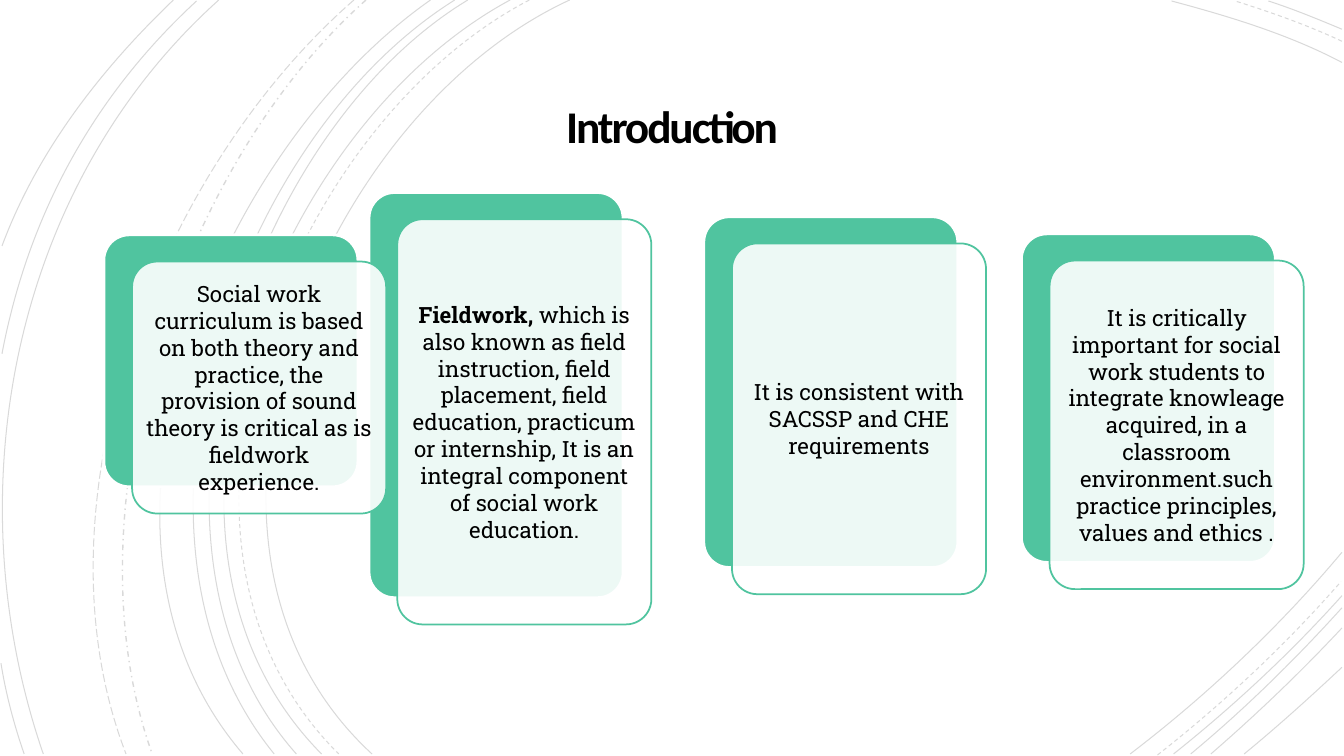
"""Builds the Introduction slide: four layered cards over a field of thin arcs."""
import pptx
import pptx.util
import pptx.dml.color
import pptx.enum.dml
import pptx.enum.shapes
import pptx.enum.text
import pptx.oxml.ns
import lxml.etree

Inches = pptx.util.Inches
Pt = pptx.util.Pt
DASH = pptx.enum.dml.MSO_LINE
GREEN, WHITE, BLACK = "50C49F", "FFFFFF", "000000"


def paint(fill, color, opacity=100):
    fill.solid()
    fill.fore_color.rgb = pptx.dml.color.RGBColor.from_string(color)
    if opacity < 100:
        parent = fill._xPr.find(".//" + pptx.oxml.ns.qn("a:srgbClr"))
        alpha = lxml.etree.SubElement(parent, pptx.oxml.ns.qn("a:alpha"))
        alpha.set("val", str(opacity * 1000))


def add_run(paragraph, text, font, size, bold=False):
    run = paragraph.add_run()
    run.text = text
    run.font.name = font
    run.font.size = Pt(size)
    run.font.bold = bold
    paint(run.font.fill, BLACK)
    return run


presentation = pptx.Presentation()
presentation.slide_width = Inches(13.33)
presentation.slide_height = Inches(7.5)
slide = presentation.slides.add_slide(presentation.slide_layouts[5])
paint(slide.background.fill, WHITE)

arcs = [
    ((5.65, 0), (3.15, 1.15), (1.43, 5.4), (3.69, 7.48), "solid"),
    ((13.31, 0.62), (12.78, 0.34), (12.18, 0.16), (11.62, 0.01), "solid"),
    ((11.21, 7.48), (11.97, 6.9), (12.69, 6.22), (13.31, 5.48), "solid"),
    ((5.25, 0), (2.85, 1.25), (1.23, 5.37), (3.36, 7.48), "dash"),
    ((13.31, 0.41), (12.97, 0.25), (12.6, 0.12), (12.25, 0.01), "dash"),
    ((11.48, 7.49), (12.13, 6.98), (12.75, 6.4), (13.3, 5.77), "dash"),
    ((5.06, 0), (2.7, 1.27), (1.1, 5.37), (3.19, 7.48), "solid"),
    ((13.31, 0.29), (13.07, 0.19), (12.83, 0.09), (12.58, 0.01), "solid"),
    ((11.64, 7.48), (12.23, 7.01), (12.8, 6.48), (13.31, 5.91), "solid"),
    ((4.64, 0), (2.44, 1.33), (1.1, 5.41), (2.94, 7.48), "solid"),
    ((11.81, 7.48), (12.34, 7.04), (12.84, 6.55), (13.31, 6.03), "solid"),
    ((4.51, 0), (2.31, 1.38), (0.97, 5.33), (2.72, 7.48), "solid"),
    ((12.01, 7.48), (12.46, 7.09), (12.9, 6.67), (13.31, 6.23), "solid"),
    ((4.27, 0), (2.17, 1.47), (0.53, 5.29), (2.41, 7.48), "solid"),
    ((12.34, 7.48), (12.67, 7.21), (12.99, 6.92), (13.31, 6.62), "solid"),
    ((3.63, 0), (1.76, 1.66), (0.65, 5.09), (1.51, 7.48), "dash dot"),
    ((3.51, 0), (1.57, 1.69), (0.29, 4.99), (1.25, 7.48), "long dash"),
    ((2.17, 0), (0.11, 1.85), (-0.46, 4.9), (0.43, 7.48), "solid"),
    ((1.95, 0.01), (0.92, 0.96), (0.28, 2.14), (0.02, 3.51), "solid"),
    ((0.01, 6.58), (0.06, 6.89), (0.14, 7.19), (0.24, 7.48), "solid"),
    ((1.72, 0), (1, 0.69), (0.37, 1.5), (0.02, 2.44), "solid"),
]
dashes = {"solid": DASH.SOLID, "dash": DASH.DASH,
          "dash dot": DASH.DASH_DOT, "long dash": DASH.LONG_DASH}
for *corners, dash in arcs:
    points = [(Inches(x), Inches(y)) for x, y in corners]
    builder = slide.shapes.build_freeform(*points[0])
    builder.add_line_segments(points[1:], close=False)
    arc = builder.convert_to_shape()
    outline = arc._element.find(".//" + pptx.oxml.ns.qn("a:path"))
    curve = lxml.etree.SubElement(outline, pptx.oxml.ns.qn("a:cubicBezTo"))
    for segment in outline.findall(pptx.oxml.ns.qn("a:lnTo")):
        curve.append(segment[0])
        outline.remove(segment)
    arc.shadow.inherit = False
    arc.fill.background()
    arc.line.width = Pt(1 if dash == "dash dot" else 0.75)
    paint(arc.line.fill, BLACK, 15)
    arc.line.dash_style = dashes[dash]

title = slide.shapes.title
title.left, title.top, title.width, title.height = map(Inches, (1.92, 0.87, 9.49, 1.15))
frame = title.text_frame
frame.auto_size = pptx.enum.text.MSO_AUTO_SIZE.NONE
frame.vertical_anchor = pptx.enum.text.MSO_ANCHOR.MIDDLE
frame.margin_left = frame.margin_right = Inches(0.25)
frame.margin_top, frame.margin_bottom = Inches(0.1), Inches(0.41)
paragraph = frame.paragraphs[0]
paragraph.alignment = pptx.enum.text.PP_ALIGN.CENTER
paragraph.line_spacing = 0.85
run = add_run(paragraph, "Introduction", "Calibri", 32.4, True)
run.font._element.set("spc", "-150")

card_width, offset_x, offset_y, inset = 2.52, 0.28, 0.265, 0.075
cards = [
    (3.66, 1.91, 4.02, "Fieldwork, ",
     "which is also known as field instruction, field placement, field education, "
     "practicum or internship, It is an integral component of social work education."),
    (6.98, 2.15, 3.48, "", "It is consistent with SACSSP and CHE requirements"),
    (1.03, 2.33, 2.5, "",
     "Social work curriculum is based on both theory and practice, the provision of "
     "sound theory is critical as is fieldwork experience."),
    (10.13, 2.32, 3.26, "",
     "It is critically important for social work students to integrate knowleage "
     "acquired, in a classroom environment.such practice principles, values and ethics ."),
]
for left, top, height, lead, body in cards:
    front_left, front_top = left + offset_x, top + offset_y
    layers = [(left, top, GREEN, 100, WHITE, 2),
              (front_left, front_top, WHITE, 90, GREEN, 1.25)]
    for x, y, fill, opacity, border, weight in layers:
        card = slide.shapes.add_shape(
            pptx.enum.shapes.MSO_SHAPE.ROUNDED_RECTANGLE,
            Inches(x), Inches(y), Inches(card_width), Inches(height))
        card.adjustments[0] = 0.1
        card.shadow.inherit = False
        paint(card.fill, fill, opacity)
        paint(card.line.fill, border)
        card.line.width = Pt(weight)
    label = slide.shapes.add_textbox(
        Inches(front_left + inset), Inches(front_top + inset),
        Inches(card_width - 2 * inset), Inches(height - 2 * inset))
    frame = label.text_frame
    frame.word_wrap = True
    frame.vertical_anchor = pptx.enum.text.MSO_ANCHOR.MIDDLE
    frame.margin_left = frame.margin_right = Inches(0.06)
    frame.margin_top = frame.margin_bottom = Inches(0.07)
    paragraph = frame.paragraphs[0]
    paragraph.alignment = pptx.enum.text.PP_ALIGN.CENTER
    if lead:
        add_run(paragraph, lead, "Roboto Slab", 16, True)
    add_run(paragraph, body, "Roboto Slab", 16)

presentation.save("out.pptx")
